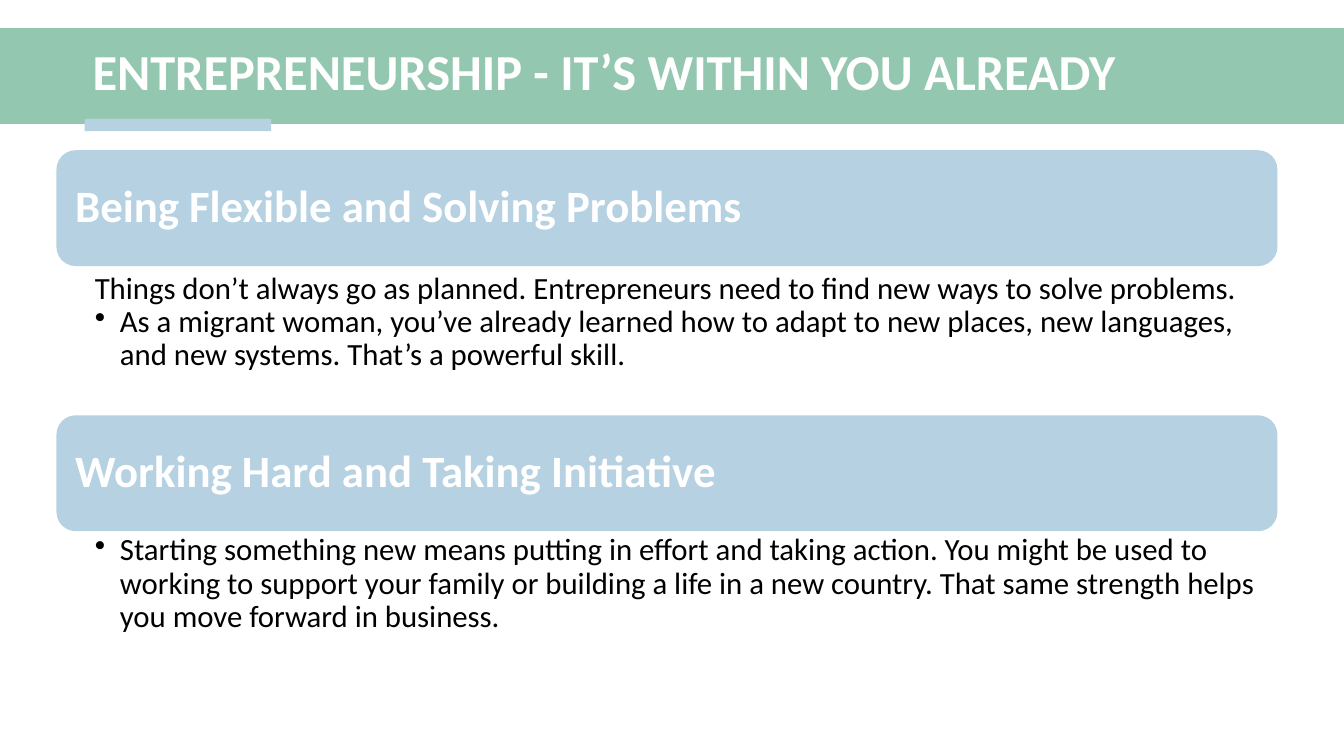
"""Builds the slide on the entrepreneurial skills migrant women already have."""
from pptx import Presentation
from pptx.dml.color import RGBColor
from pptx.enum.shapes import MSO_SHAPE
from pptx.enum.text import MSO_ANCHOR, PP_ALIGN
from pptx.oxml.ns import qn
from pptx.util import Inches, Pt

RECT, ROUNDED = MSO_SHAPE.RECTANGLE, MSO_SHAPE.ROUNDED_RECTANGLE
TOP, MIDDLE, LEFT = MSO_ANCHOR.TOP, MSO_ANCHOR.MIDDLE, PP_ALIGN.LEFT

THEME = {
    "font": "Calibri",
    "green": RGBColor.from_string("94C7B0"),
    "blue": RGBColor.from_string("B6D1E1"),
    "white": RGBColor.from_string("FFFFFF"),
    "black": RGBColor.from_string("000000"),
    "title": Pt(36), "heading": Pt(32), "body": Pt(22),
}
WIDTH, HEIGHT = 13.33, 7.5
CARD_LEFT, CARD_WIDTH, HEADING_HEIGHT = 0.56, 12.11, 1.15
FIRST_CARD, CARD_STEP = 1.49, 2.63
BULLET_INDENT = 0.25


def add_block(kind, left, top, width, height, color):
    block = slide.shapes.add_shape(
        kind, Inches(left), Inches(top), Inches(width), Inches(height))
    block.shadow.inherit = False
    block.fill.solid()
    block.fill.fore_color.rgb = color
    block.line.fill.background()
    return block


def write(holder, lines, size, color, bold=False, anchor=MIDDLE, insets=(0.1, 0.05, 0.1, 0.05)):
    frame = holder.text_frame
    frame.word_wrap = True
    frame.vertical_anchor = anchor
    (frame.margin_left, frame.margin_top,
     frame.margin_right, frame.margin_bottom) = map(Inches, insets)
    for index, (text, bulleted, spacing) in enumerate(lines):
        paragraph = frame.add_paragraph() if index else frame.paragraphs[0]
        if bulleted:
            properties = paragraph._p.get_or_add_pPr()
            properties.set("marL", str(Inches(BULLET_INDENT)))
            properties.set("indent", str(-Inches(BULLET_INDENT)))
            bullet = properties.makeelement(qn("a:buChar"), {"char": "•"})
            properties.append(bullet)
        paragraph.alignment = LEFT
        paragraph.line_spacing = spacing
        run = paragraph.add_run()
        run.text = text
        run.font.name, run.font.size = THEME["font"], size
        run.font.bold, run.font.color.rgb = bold, color


deck = Presentation()
deck.slide_width, deck.slide_height = Inches(WIDTH), Inches(HEIGHT)
slide = deck.slides.add_slide(deck.slide_layouts[6])

add_block(RECT, 0, 0.28, WIDTH, 0.95, THEME["green"])
add_block(RECT, 0.84, 1.18, 1.85, 0.12, THEME["blue"])
title = slide.shapes.add_textbox(Inches(0.82), Inches(0.34), Inches(11.93), Inches(0.79))
write(title, [("ENTREPRENEURSHIP - IT’S WITHIN YOU ALREADY", False, 0.9)],
      THEME["title"], THEME["white"], bold=True)

skills = [
    ("Being Flexible and Solving Problems", 1.49, [
        ("Things don’t always go as planned. Entrepreneurs need to find new ways "
         "to solve problems.", False, 1.0),
        ("As a migrant woman, you’ve already learned how to adapt to new places, "
         "new languages, and new systems. That’s a powerful skill.", True, 0.9),
    ]),
    ("Working Hard and Taking Initiative", 1.08, [
        ("Starting something new means putting in effort and taking action. You might "
         "be used to working to support your family or building a life in a new country. "
         "That same strength helps you move forward in business.", True, 0.9),
    ]),
]
for row, (skill, detail_height, details) in enumerate(skills):
    top = FIRST_CARD + row * CARD_STEP
    heading = add_block(ROUNDED, CARD_LEFT, top, CARD_WIDTH, HEADING_HEIGHT, THEME["blue"])
    write(heading, [(skill, False, 0.9)], THEME["heading"], THEME["white"],
          bold=True, insets=(0.13, 0.13, 0.13, 0.13))
    explanation = slide.shapes.add_textbox(
        Inches(CARD_LEFT), Inches(top + HEADING_HEIGHT),
        Inches(CARD_WIDTH), Inches(detail_height))
    write(explanation, details, THEME["body"], THEME["black"],
          anchor=TOP, insets=(0.38, 0.03, 0.17, 0.03))

deck.save("out.pptx")
